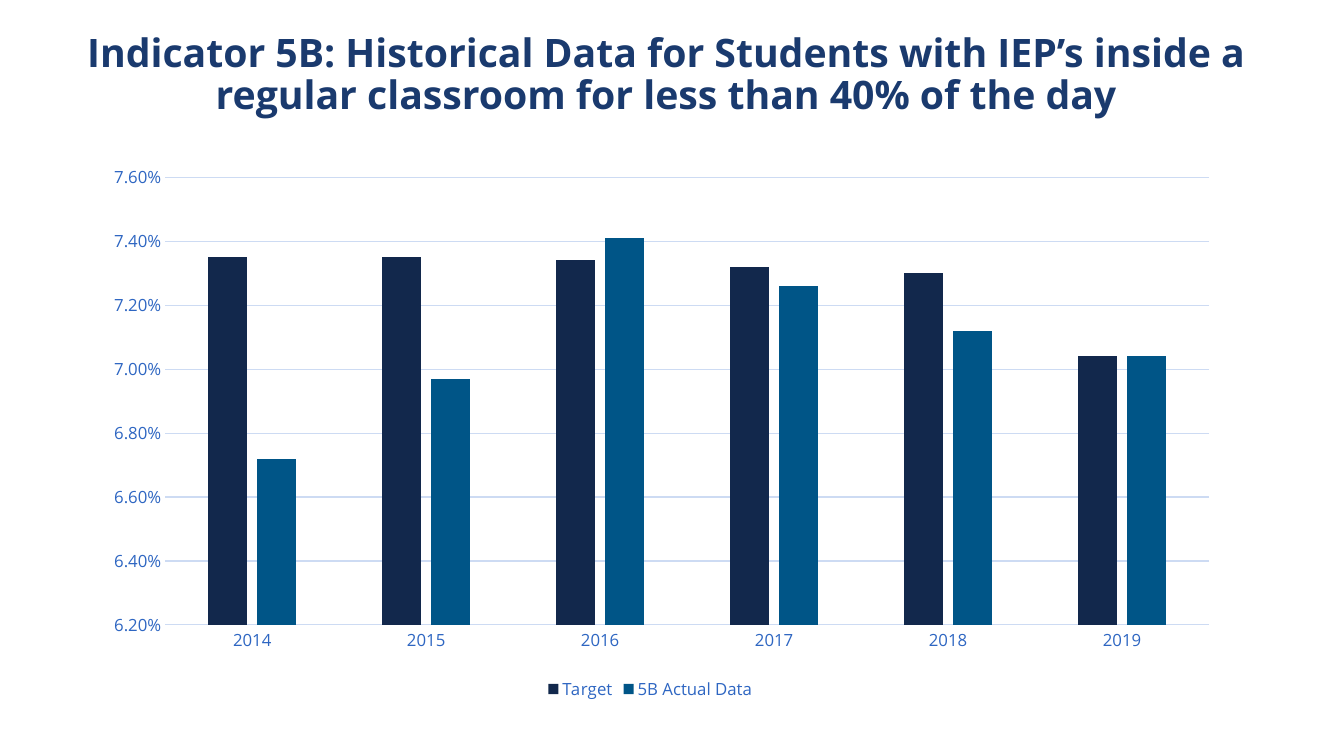
from lxml.etree import SubElement
from pptx import Presentation
from pptx.chart.data import CategoryChartData
from pptx.dml.color import RGBColor
from pptx.enum.chart import XL_CHART_TYPE, XL_LEGEND_POSITION, XL_TICK_MARK
from pptx.enum.text import MSO_ANCHOR, PP_ALIGN
from pptx.oxml.ns import qn
from pptx.util import Inches, Pt

FONT = "Open Sans"
COLORS = {
    "background": "FFFFFF",
    "title": "1A3A6E",
    "target": "12284C",
    "actual": "005587",
    "label": "2E66C2",
    "grid": "CDDBF3",
}
YEARS = ["2014", "2015", "2016", "2017", "2018", "2019"]
SERIES = [
    ("Target", "target", [7.35, 7.35, 7.34, 7.32, 7.30, 7.04]),
    ("5B Actual Data", "actual", [6.72, 6.97, 7.41, 7.26, 7.12, 7.04]),
]
PLOT_AREA = {"x": 0.086, "y": 0.118, "w": 0.891, "h": 0.749}


def color(name):
    return RGBColor.from_string(COLORS[name])


def set_font(font, size, color_name, bold=False):
    font.name = FONT
    font.size = Pt(size)
    font.bold = bold
    font.color.rgb = color(color_name)


def set_line(line, color_name):
    line.width = Pt(0.75)
    line.color.rgb = color(color_name)


def share_of_slide(presentation, left, top, width, height):
    slide_width, slide_height = presentation.slide_width, presentation.slide_height
    return (
        int(left * slide_width),
        int(top * slide_height),
        int(width * slide_width),
        int(height * slide_height),
    )


def format_title(title, text, box):
    title.left, title.top, title.width, title.height = box
    frame = title.text_frame
    frame.text = text
    frame.word_wrap = True
    frame.vertical_anchor = MSO_ANCHOR.MIDDLE
    paragraph = frame.paragraphs[0]
    paragraph.alignment = PP_ALIGN.CENTER
    paragraph.line_spacing = 0.88
    set_font(paragraph.font, 28, "title", bold=True)


def place_plot_area(chart):
    plot_area = chart.element.find(".//" + qn("c:plotArea"))
    for layout in plot_area.findall(qn("c:layout")):
        plot_area.remove(layout)
    layout = SubElement(plot_area, qn("c:layout"))
    plot_area.insert(0, layout)
    manual = SubElement(layout, qn("c:manualLayout"))
    settings = {"layoutTarget": "inner", "xMode": "edge", "yMode": "edge", **PLOT_AREA}
    for tag, value in settings.items():
        SubElement(manual, qn("c:" + tag)).set("val", str(value))


def format_axes(chart):
    for axis in (chart.category_axis, chart.value_axis):
        axis.major_tick_mark = axis.minor_tick_mark = XL_TICK_MARK.NONE
        set_font(axis.tick_labels.font, 12, "label")
    set_line(chart.category_axis.format.line, "grid")
    values = chart.value_axis
    values.minimum_scale, values.maximum_scale, values.major_unit = 0.062, 0.076, 0.002
    values.format.line.fill.background()
    values.has_major_gridlines = True
    set_line(values.major_gridlines.format.line, "grid")
    values.tick_labels.number_format = "0.00%"
    values.tick_labels.number_format_is_linked = False


def add_column_chart(slide, box):
    data = CategoryChartData(number_format="0.00%")
    data.categories = YEARS
    for name, _, percentages in SERIES:
        data.add_series(name, [round(value / 100, 4) for value in percentages])
    chart = slide.shapes.add_chart(XL_CHART_TYPE.COLUMN_CLUSTERED, *box, data).chart
    set_font(chart.font, 10, "target")
    chart.has_title = False
    chart.has_legend = True
    chart.legend.position = XL_LEGEND_POSITION.BOTTOM
    chart.legend.include_in_layout = False
    set_font(chart.legend.font, 12, "label")
    plot = chart.plots[0]
    plot.gap_width = 219
    plot.overlap = -27
    plot.vary_by_categories = False
    for series, (_, color_name, _) in zip(plot.series, SERIES):
        series.invert_if_negative = False
        series.format.fill.solid()
        series.format.fill.fore_color.rgb = color(color_name)
    format_axes(chart)
    place_plot_area(chart)


def main():
    presentation = Presentation()
    presentation.slide_width = Inches(13.33)
    presentation.slide_height = Inches(7.5)
    slide = presentation.slides.add_slide(presentation.slide_layouts[5])
    slide.background.fill.solid()
    slide.background.fill.fore_color.rgb = color("background")
    format_title(
        slide.shapes.title,
        "Indicator 5B: Historical Data for Students with IEP’s inside a "
        "regular classroom for less than 40% of the day",
        share_of_slide(presentation, 0.0135, 0.031, 0.964, 0.139),
    )
    add_column_chart(slide, share_of_slide(presentation, 0.048, 0.1413, 0.8717, 0.7907))
    presentation.save("out.pptx")


if __name__ == "__main__":
    main()
